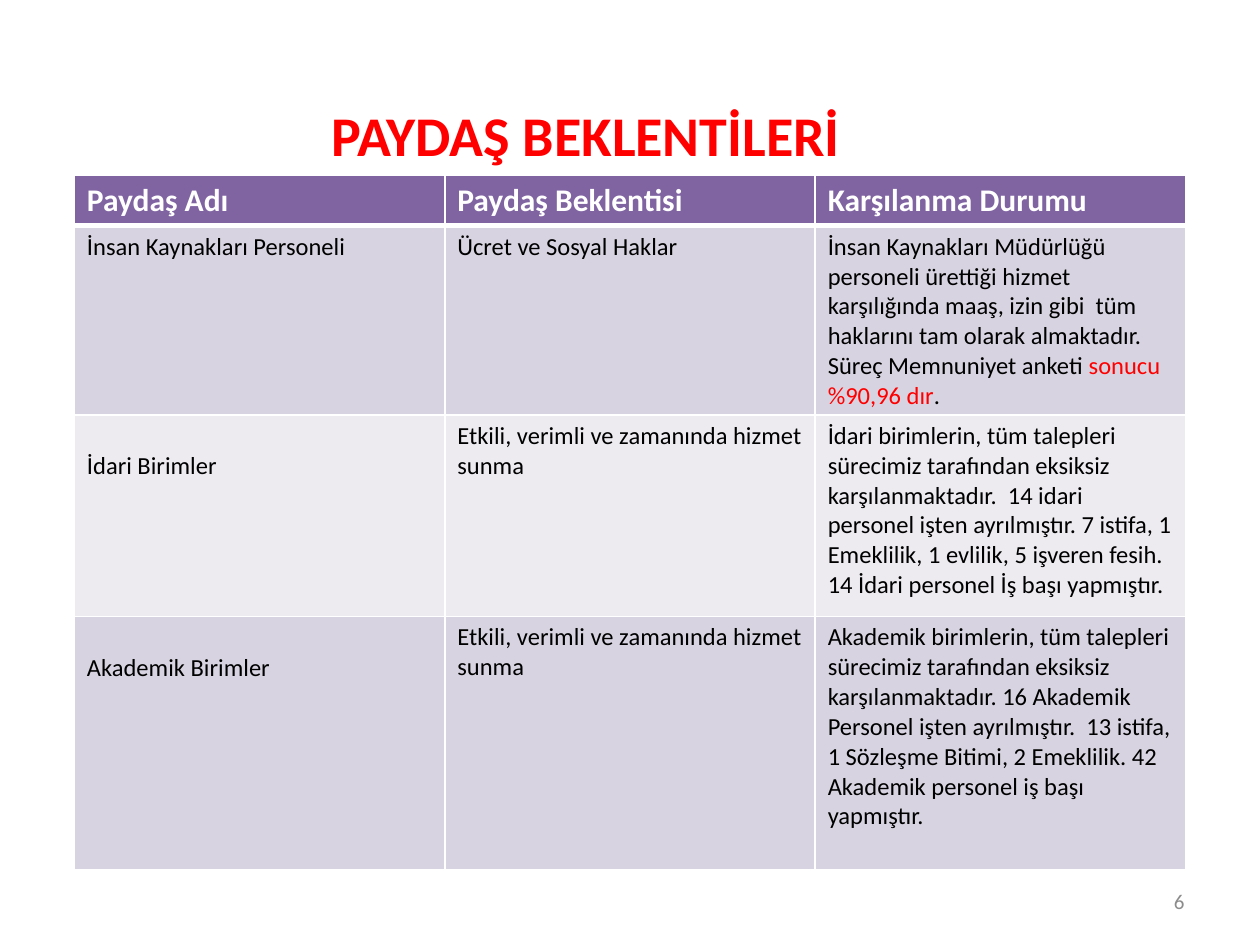
"""Build the stakeholder expectations slide."""
from dataclasses import dataclass

from lxml import etree
from pptx import Presentation
from pptx import util as u
from pptx.dml.color import RGBColor
from pptx.enum import text
from pptx.oxml.ns import qn

COLORS = {
    "red": "FF0000", "white": "FFFFFF", "black": "000000", "gray": "8C8C8C",
    "header": "8064A2", "odd": "D8D3E0", "even": "EDEAF0",
}
TITLE = {"size": u.Pt(32), "bold": True}
HEADER = {"size": u.Pt(18), "bold": True}
BODY = {"size": u.Pt(14), "bold": False}
NUMBER = {"size": u.Pt(12), "bold": False}
CELL_MARGIN = 0.05
LINE_HEIGHT = 0.24
SERVICE = "Etkili, verimli ve zamanında hizmet sunma"


@dataclass
class Span:
    words: str
    color: str = "black"


@dataclass
class Stakeholder:
    name: str
    expectation: str
    status: list[Span]
    height: float
    lowered_lines: int = 0


HEADINGS = ["Paydaş Adı", "Paydaş Beklentisi", "Karşılanma Durumu"]
STAKEHOLDERS = [
    Stakeholder("İnsan Kaynakları Personeli", "Ücret ve Sosyal Haklar", [
        Span("İnsan Kaynakları Müdürlüğü personeli ürettiği hizmet karşılığında maaş, "
             "izin gibi  tüm haklarını tam olarak almaktadır. Süreç Memnuniyet anketi "),
        Span("sonucu %90,96 dır", "red"),
        Span("."),
    ], 1.38),
    Stakeholder("İdari Birimler", SERVICE, [
        Span("İdari birimlerin, tüm talepleri sürecimiz tarafından eksiksiz "
             "karşılanmaktadır.  14 idari personel işten ayrılmıştır. 7 istifa, "
             "1 Emeklilik, 1 evlilik, 5 işveren fesih. 14 İdari personel İş başı "
             "yapmıştır."),
    ], 1.6, 1),
    Stakeholder("Akademik Birimler", SERVICE, [
        Span("Akademik birimlerin, tüm talepleri sürecimiz tarafından eksiksiz "
             "karşılanmaktadır. 16 Akademik Personel işten ayrılmıştır.  13 istifa, "
             "1 Sözleşme Bitimi, 2 Emeklilik. 42 Akademik personel iş başı yapmıştır."),
    ], 2.01, 1),
]


def rgb(color: str) -> RGBColor:
    return RGBColor.from_string(COLORS[color])


def write(frame, spans: list[Span], style: dict, align=text.PP_ALIGN.LEFT) -> None:
    para = frame.paragraphs[0]
    para.alignment = align
    for span in spans:
        run = para.add_run()
        run.text = span.words
        run.font.name = "Calibri"
        run.font.color.rgb = rgb(span.color)
        for name, value in style.items():
            setattr(run.font, name, value)


def set_borders(cell, bottom: float) -> None:
    properties = cell._tc.get_or_add_tcPr()
    for index, (side, width) in enumerate({"L": 1, "R": 1, "T": 1, "B": bottom}.items()):
        line = etree.Element(qn(f"a:ln{side}"), w=str(u.Pt(width)))
        fill = etree.SubElement(line, qn("a:solidFill"))
        etree.SubElement(fill, qn("a:srgbClr"), val=COLORS["white"])
        properties.insert(index, line)


def fill_cell(cell, spans: list[Span], style: dict, color: str,
              bottom: float = 1, lowered_lines: int = 0) -> None:
    cell.fill.solid()
    cell.fill.fore_color.rgb = rgb(color)
    cell.margin_top = u.Inches(CELL_MARGIN + lowered_lines * LINE_HEIGHT)
    set_borders(cell, bottom)
    write(cell.text_frame, spans, style)


def add_title(page) -> None:
    title = page.shapes.title
    title.left, title.top = u.Inches(1.38), u.Inches(0.75)
    title.width, title.height = u.Inches(6.54), u.Inches(0.64)
    title.text_frame.vertical_anchor = text.MSO_ANCHOR.TOP
    write(title.text_frame, [Span("PAYDAŞ BEKLENTİLERİ", "red")], TITLE,
          text.PP_ALIGN.CENTER)


def add_page_number(page) -> None:
    box = page.shapes.add_textbox(u.Inches(7.17), u.Inches(6.95),
                                  u.Inches(2.33), u.Inches(0.4))
    box.text_frame.word_wrap = True
    box.text_frame.vertical_anchor = text.MSO_ANCHOR.MIDDLE
    write(box.text_frame, [Span("6", "gray")], NUMBER, text.PP_ALIGN.RIGHT)


def add_stakeholder_table(page) -> None:
    heights = [0.37] + [item.height for item in STAKEHOLDERS]
    table = page.shapes.add_table(
        len(heights), len(HEADINGS), u.Inches(0.59), u.Inches(1.39),
        u.Inches(8.82), u.Inches(sum(heights))).table
    for row, height in zip(table.rows, heights):
        row.height = u.Inches(height)
    for column, heading in enumerate(HEADINGS):
        fill_cell(table.cell(0, column), [Span(heading, "white")], HEADER, "header", 3)
    for row, item in enumerate(STAKEHOLDERS, 1):
        color = "odd" if row % 2 else "even"
        fill_cell(table.cell(row, 0), [Span(item.name)], BODY, color,
                  lowered_lines=item.lowered_lines)
        fill_cell(table.cell(row, 1), [Span(item.expectation)], BODY, color)
        fill_cell(table.cell(row, 2), item.status, BODY, color)


def main() -> None:
    deck = Presentation()
    deck.slide_width, deck.slide_height = u.Inches(10), u.Inches(7.5)
    page = deck.slides.add_slide(deck.slide_layouts.get_by_name("Title Only"))
    add_title(page)
    add_page_number(page)
    add_stakeholder_table(page)
    deck.save("out.pptx")


if __name__ == "__main__":
    main()
